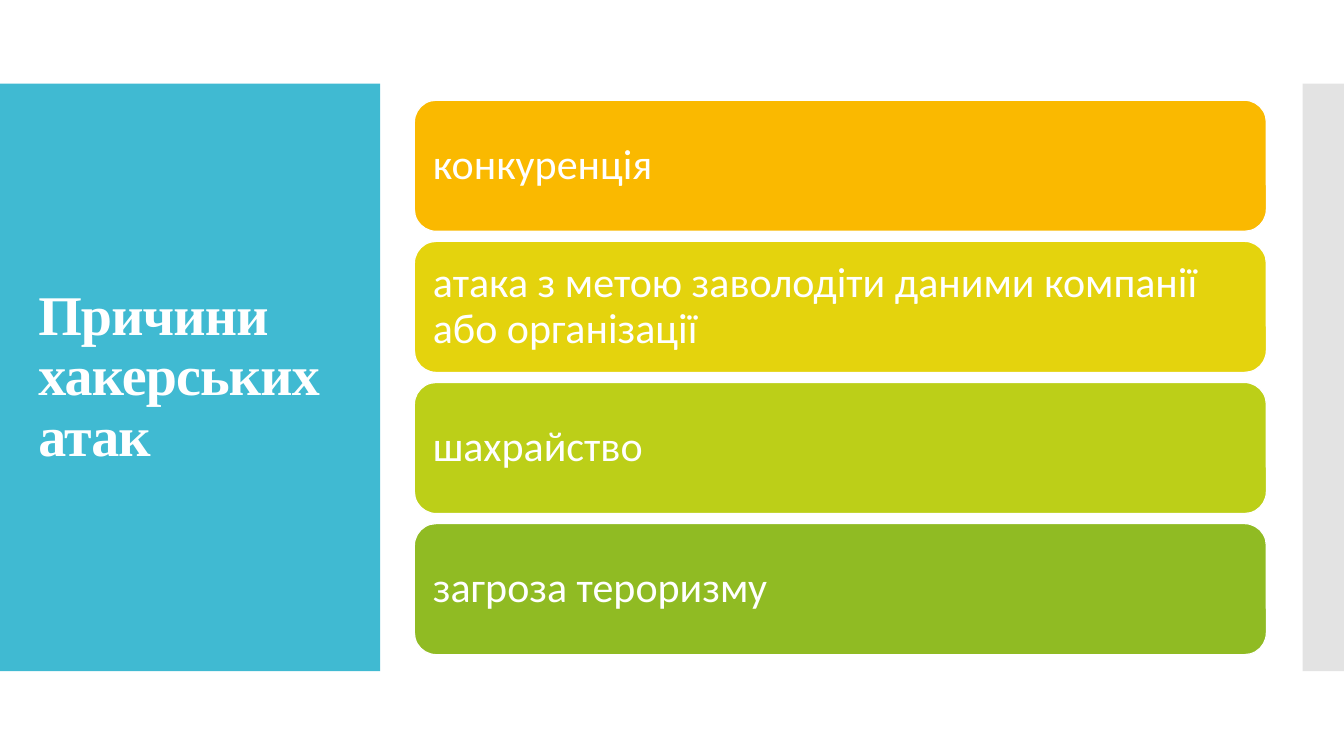
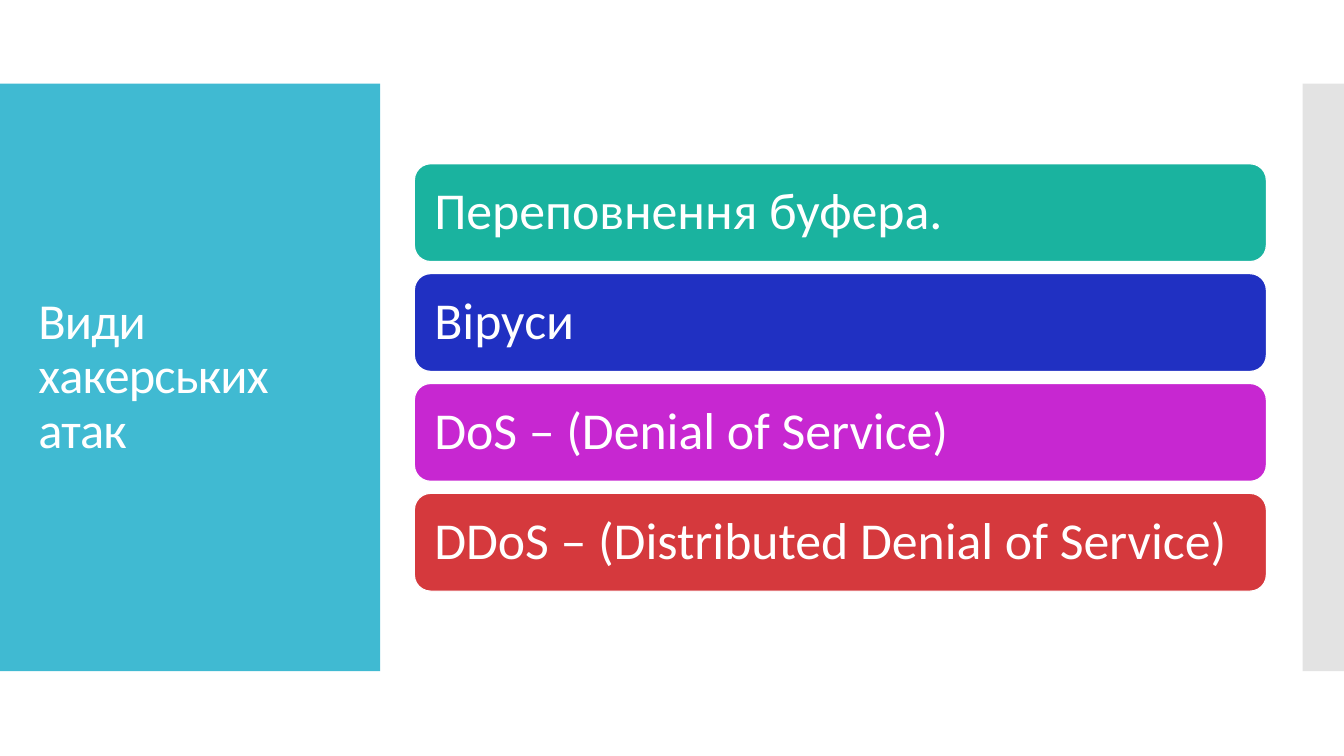
from dataclasses import dataclass
from lxml import etree
from pptx import Presentation, util as u
from pptx.dml.color import RGBColor
from pptx.enum import shapes, text
from pptx.oxml.ns import qn


@dataclass(frozen=True)
class Theme:
    teal: str = "40BAD2"
    gray: str = "C8C8C8"
    white: str = "FFFFFF"
    warm: tuple = ("FAB900", "E4D30D", "BCCF18", "90BB23")
    vivid: tuple = ("1AB39F", "2030C2", "C727D1", "D5393D")
    sans: str = "Calibri"
    serif: str = "Times New Roman"
    edge: float = 0.85


T = Theme()
WIDE, HIGH = 13.33, 7.5
BAND = (0.83, 5.83)            # top and height of the side bands
HEAD = (0.28, 1.23, 3.22, 5.03)
BODY = (4.11, 0.83, 8.45, 5.83)


def put(shape, words, size, font=T.sans, bold=False, track=None, inset=0.1):
    """Write one left-aligned paragraph, centred by height."""
    frame = shape.text_frame
    frame.word_wrap = True
    frame.auto_size = text.MSO_AUTO_SIZE.NONE
    frame.vertical_anchor = text.MSO_ANCHOR.MIDDLE
    for side in ("left", "top", "right", "bottom"):
        setattr(frame, f"margin_{side}", u.Inches(inset))
    para = frame.paragraphs[0]
    para.alignment = text.PP_ALIGN.LEFT
    para.line_spacing = 0.9
    run = para.add_run()
    run.text = words
    run.font.name, run.font.size, run.font.bold = font, u.Pt(size), bold
    run.font.color.rgb = RGBColor.from_string(T.white)
    if track is not None:
        run.font.element.set("spc", str(round(track * 100))) if hasattr(
            run.font, "element") else run._r.get_or_add_rPr().set(
            "spc", str(round(track * 100)))


def block(slide, kind, box, fill, line=None):
    shape = slide.shapes.add_shape(kind, *map(u.Inches, box))
    shape.shadow.inherit = False
    shape.fill.solid()
    shape.fill.fore_color.rgb = RGBColor.from_string(fill)
    if line:
        shape.line.color.rgb = RGBColor.from_string(line)
        shape.line.width = u.Pt(T.edge)
    else:
        shape.line.fill.background()
    return shape


def frame(slide, layout):
    """Set the side bands and the title place on the shared layout."""
    top, tall = BAND
    rect = shapes.MSO_SHAPE.RECTANGLE
    left = block(slide, rect, (0, top, 3.77, tall), T.teal)
    right = block(slide, rect, (12.92, top, WIDE - 12.92, tall), T.gray)
    tint = right.element.spPr.find(f"{qn('a:solidFill')}/{qn('a:srgbClr')}")
    etree.SubElement(tint, qn("a:alpha")).set("val", "50000")
    for spot, band in enumerate((left, right), 2):
        layout.shapes.element.insert(spot, band.element)
    title = layout.placeholders[0]
    title.left, title.top, title.width, title.height = map(u.Inches, HEAD)


def stack(slide, box, items, fills, tall, gap, size, inset):
    """Rounded bars at equal gaps, centred by height in the box."""
    x, y, wide, high = box
    top = y + (high - len(items) * tall - (len(items) - 1) * gap) / 2
    for row, (words, fill) in enumerate(zip(items, fills)):
        bar = block(slide, shapes.MSO_SHAPE.ROUNDED_RECTANGLE,
                    (x, top + row * (tall + gap), wide, tall), fill, T.white)
        put(bar, words, size, inset=inset)


PAGES = (
    dict(title="Причини хакерських атак",
         head=dict(size=40, font=T.serif, bold=True),
         bars=dict(items=("конкуренція",
                          "атака з метою заволодіти даними компанії або організації",
                          "шахрайство", "загроза тероризму"),
                   fills=T.warm, tall=1.3, gap=0.1, size=30, inset=0.12)),
    dict(title="Види хакерських атак",
         head=dict(size=36),
         bars=dict(items=("Переповнення буфера.", "Віруси",
                          "DoS – (Denial of Service)",
                          "DDoS – (Distributed Denial of Service)"),
                   fills=T.vivid, tall=0.97, gap=0.12, size=37, inset=0.15)),
)


def main():
    deck = Presentation()
    deck.slide_width, deck.slide_height = u.Inches(WIDE), u.Inches(HIGH)
    layout = deck.slide_layouts[5]
    for page in PAGES:
        slide = deck.slides.add_slide(layout)
        if page is PAGES[0]:
            frame(slide, layout)
        put(slide.shapes.title, page["title"], track=-0.6, **page["head"])
        stack(slide, BODY, **page["bars"])
    deck.save("out.pptx")


if __name__ == "__main__":
    main()
